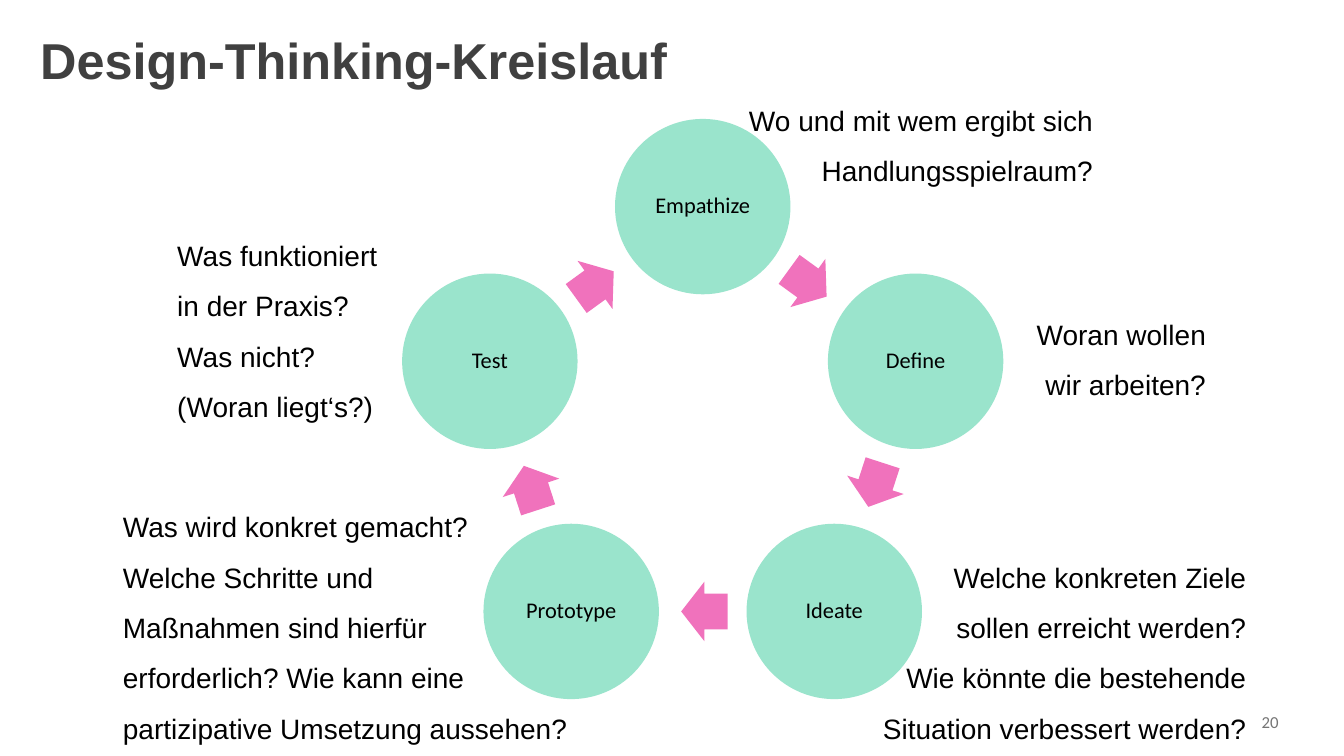
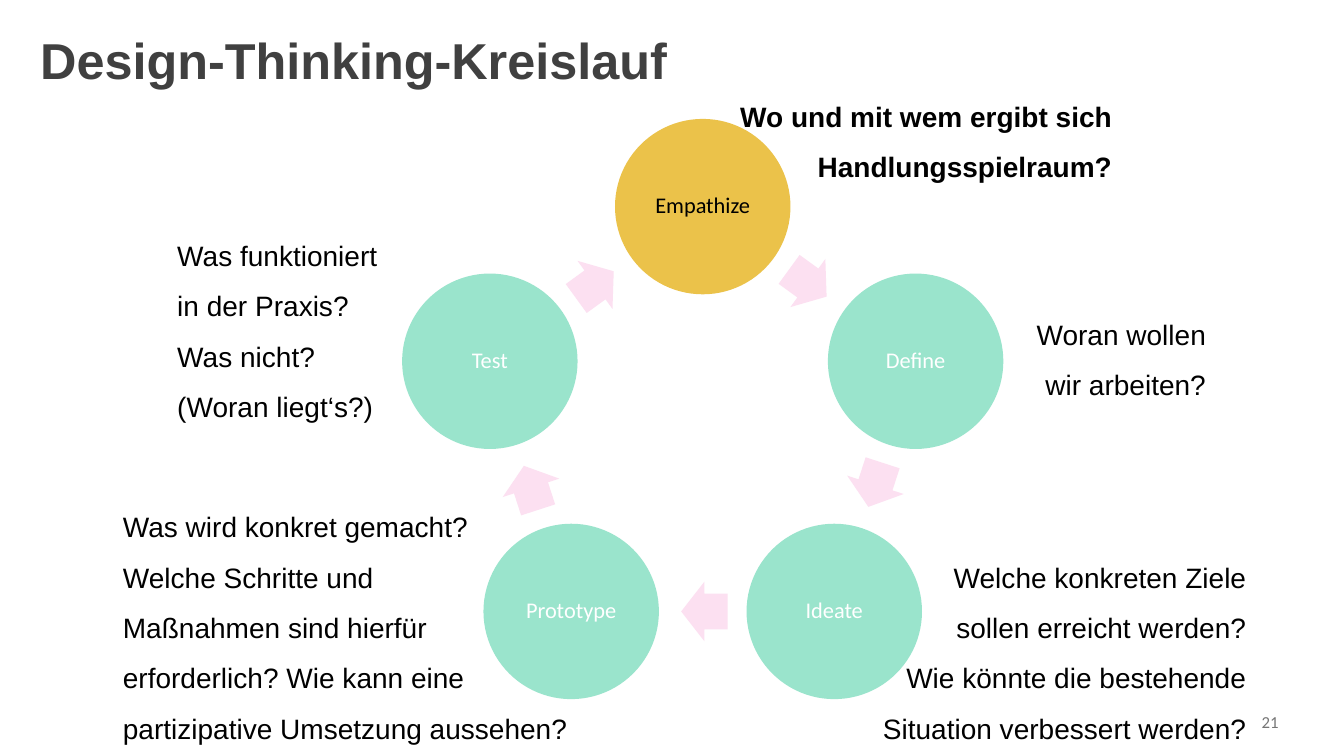
from dataclasses import dataclass
from math import cos, radians, sin

from pptx import Presentation
from pptx.dml.color import RGBColor as Rgb
from pptx.enum.shapes import MSO_SHAPE as Shape
from pptx.enum.text import MSO_ANCHOR as Anchor, PP_ALIGN as Align
from pptx.util import Inches, Pt


@dataclass(frozen=True)
class Theme:
    head: str = "404040"
    ink: str = "000000"
    white: str = "FFFFFF"
    grey: str = "757575"
    mint: str = "9AE4CC"
    gold: str = "EBC24A"
    pink: str = "F072BC"
    pale: str = "FCE0F1"
    sans: str = "Arial"
    label: str = "Calibri"
    big: int = 36
    body: int = 20
    step: int = 16
    small: int = 12


T = Theme()

# Content: steps run clockwise from the top
TITLE = "Design-Thinking-Kreislauf"
FIRST = 20
STEPS = ["Empathize", "Define", "Ideate", "Prototype", "Test"]

# Questions: box (left, top, width, height), alignment, paragraphs
ASKS = [
    ((6.98, 0.81, 3.96, 1.05), Align.RIGHT,
     ["Wo und mit wem ergibt sich Handlungsspielraum?"]),
    ((9.81, 2.93, 2.25, 1.05), Align.RIGHT,
     ["Woran wollen wir arbeiten?"]),
    ((8.02, 5.34, 4.44, 2.06), Align.RIGHT,
     ["Welche konkreten Ziele",
      "sollen erreicht werden?",
      "Wie könnte die bestehende",
      "Situation verbessert werden?"]),
    ((1.12, 4.84, 4.88, 3.07), Align.LEFT,
     ["Was wird konkret gemacht?",
      "Welche Schritte und",
      "Maßnahmen sind hierfür",
      "erforderlich? Wie kann eine partizipative Umsetzung aussehen?"]),
    ((1.66, 2.15, 2.87, 2.06), Align.LEFT,
     ["Was funktioniert",
      "in der Praxis?",
      "Was nicht?",
      "(Woran liegt‘s?)"]),
]

# Slides: the step in focus, its question's shift, arrow and label colours
VIEWS = [
    dict(focus=None, shift=(0, 0), arrow=T.pink, label=T.ink),
    dict(focus=0, shift=(0.19, -0.04), arrow=T.pale, label=T.white),
]

# Geometry of the cycle
WIDE, HIGH = 13.33, 7.5
MID_X, MID_Y, RING = 6.97, 4.27, 2.22
DISC = 1.74
ARROW_W, ARROW_H = 0.46, 0.59
ALONG = 0.494  # share of the way from one step to the next
TURN = 360 / len(STEPS)


def write(frame, lines, size, color, font=T.sans, bold=False,
          align=Align.LEFT, anchor=Anchor.TOP, space=1.0, inset=(0.1, 0.05)):
    frame.word_wrap = True
    frame.vertical_anchor = anchor
    frame.margin_left = frame.margin_right = Inches(inset[0])
    frame.margin_top = frame.margin_bottom = Inches(inset[1])
    for i, line in enumerate(lines):
        para = frame.add_paragraph() if i else frame.paragraphs[0]
        para.alignment, para.line_spacing = align, space
        run = para.add_run()
        run.text = line
        run.font.size, run.font.name, run.font.bold = Pt(size), font, bold
        run.font.color.rgb = Rgb.from_string(color)


def add_text(slide, box, lines, size, color, **form):
    area = slide.shapes.add_textbox(*map(Inches, box))
    write(area.text_frame, lines, size, color, **form)


def add_form(slide, kind, mid, wide, high, fill):
    """Place a plain filled shape around its centre."""
    box = (mid[0] - wide / 2, mid[1] - high / 2, wide, high)
    form = slide.shapes.add_shape(kind, *map(Inches, box))
    form.shadow.inherit = False
    form.fill.solid()
    form.fill.fore_color.rgb = Rgb.from_string(fill)
    form.line.fill.background()
    return form


def spot(i):
    turn = radians(i * TURN)
    return MID_X + RING * sin(turn), MID_Y - RING * cos(turn)


def add_cycle(slide, view):
    for i, name in enumerate(STEPS):
        here, after = spot(i), spot(i + 1)
        lit = i == view["focus"]
        disc = add_form(slide, Shape.OVAL, here, DISC, DISC,
                        T.gold if lit else T.mint)
        write(disc.text_frame, [name], T.step, T.ink if lit else view["label"],
              font=T.label, align=Align.CENTER, anchor=Anchor.MIDDLE,
              space=0.9, inset=(0, 0))
        mid = [a + (b - a) * ALONG for a, b in zip(here, after)]
        arrow = add_form(slide, Shape.RIGHT_ARROW, mid, ARROW_W, ARROW_H,
                         view["arrow"])
        arrow.adjustments[0], arrow.adjustments[1] = 0.6, 0.5
        arrow.rotation = (i + 0.5) * TURN


def add_asks(slide, view):
    for i, (box, align, lines) in enumerate(ASKS):
        lit = i == view["focus"]
        if lit:
            dx, dy = view["shift"]
            box = (box[0] + dx, box[1] + dy, *box[2:])
        add_text(slide, box, lines, T.body, T.ink, bold=lit, align=align,
                 space=1.5)


def main():
    deck = Presentation()
    deck.slide_width, deck.slide_height = Inches(WIDE), Inches(HIGH)
    for page, view in enumerate(VIEWS, FIRST):
        slide = deck.slides.add_slide(deck.slide_layouts[6])
        # Page number
        add_text(slide, (11.97, 7.05, 0.81, 0.22), [str(page)], T.small,
                 T.grey, font=T.label, align=Align.RIGHT, anchor=Anchor.MIDDLE)
        add_cycle(slide, view)
        add_asks(slide, view)
        # Title
        add_text(slide, (0.3, 0, 12.8, 1.25), [TITLE], T.big, T.head,
                 bold=True, anchor=Anchor.MIDDLE, space=0.9)
    deck.save("out.pptx")


if __name__ == "__main__":
    main()
